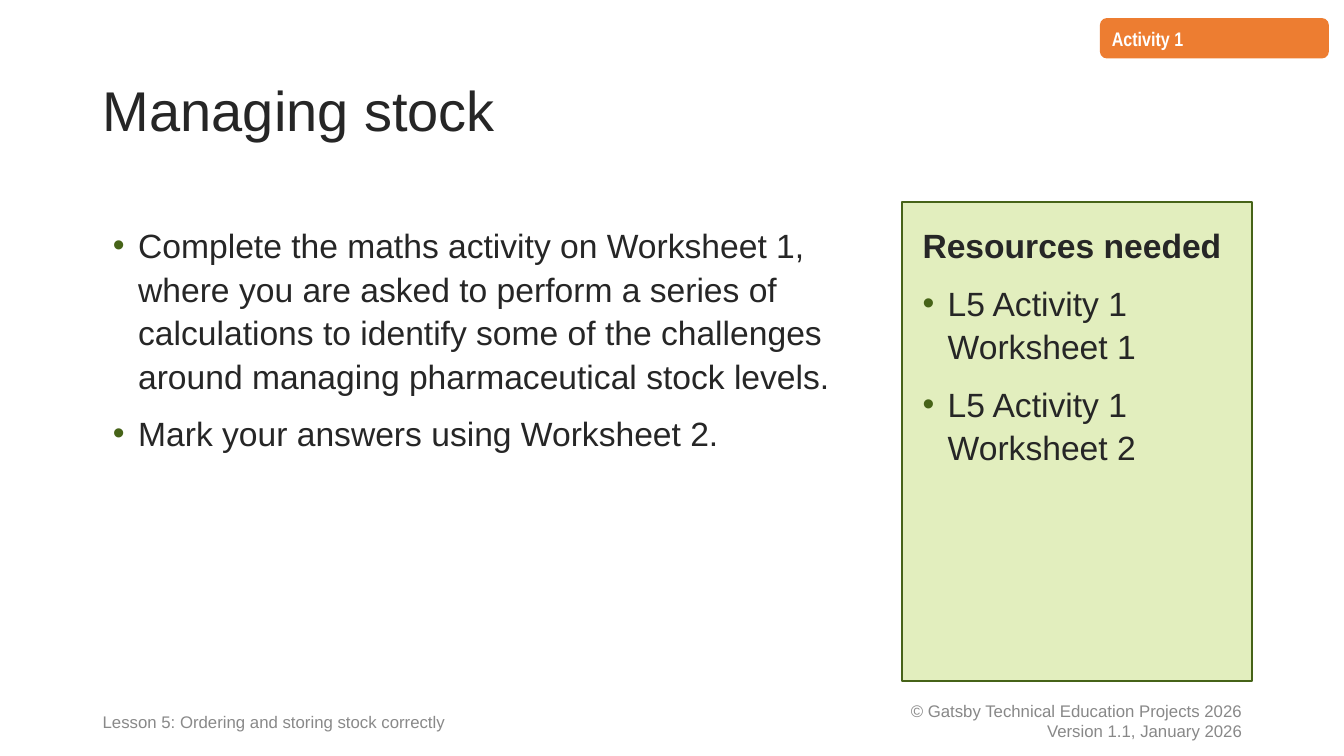
from dataclasses import dataclass

from lxml.etree import SubElement
from pptx import Presentation
from pptx.dml.color import RGBColor
from pptx.enum.shapes import MSO_SHAPE
from pptx.enum.text import MSO_ANCHOR, MSO_AUTO_SIZE, PP_ALIGN
from pptx.oxml.ns import qn
from pptx.util import Emu, Pt

EMU_PER_PX = 9144  # 100 px to the inch


def px(length):
    return Emu(length * EMU_PER_PX)


@dataclass(frozen=True)
class Theme:
    font: str = "Arial"
    tag_font: str = "Arial Narrow"
    ink: str = "262626"
    white: str = "FFFFFF"
    orange: str = "ED7D31"
    dark_green: str = "466318"
    pale_green: str = "E2EEBE"
    copyright_grey: str = "888888"
    lesson_grey: str = "898989"
    title_size: int = 40
    body_size: int = 24
    tag_size: int = 14
    footer_size: int = 12
    line_spacing: float = 1.08
    paragraph_gap: int = 10
    bullet_indent: int = 25


class SlideBuilder:
    def __init__(self, presentation, theme):
        self.theme = theme
        self.slide = presentation.slides.add_slide(presentation.slide_layouts[5])

    def title(self, text, box):
        heading = self.slide.shapes.title
        heading.left, heading.top, heading.width, heading.height = map(px, box)
        self._frame(heading.text_frame, (10, 5), MSO_ANCHOR.MIDDLE)
        self._write(heading.text_frame, [text], size=self.theme.title_size, spacing=0.9)

    def label(self, lines, box, **style):
        frame = self.slide.shapes.add_textbox(*map(px, box)).text_frame
        self._frame(frame, (10, 5), MSO_ANCHOR.MIDDLE)
        self._write(frame, lines, size=self.theme.footer_size, **style)

    def panel(self, box, fill, outline=None, kind=MSO_SHAPE.RECTANGLE, insets=(20, 20)):
        """Add a filled shape and return its text frame."""
        shape = self.slide.shapes.add_shape(kind, *map(px, box))
        shape.shadow.inherit = False
        shape.fill.solid()
        shape.fill.fore_color.rgb = RGBColor.from_string(fill)
        if outline:
            shape.line.color.rgb = RGBColor.from_string(outline)
            shape.line.width = Pt(1.5)
        else:
            shape.line.fill.background()
        self._frame(shape.text_frame, insets, MSO_ANCHOR.TOP)
        return shape.text_frame

    def tag(self, text, box):
        frame = self.panel(box, self.theme.orange, insets=(10, 5),
                           kind=MSO_SHAPE.FLOWCHART_ALTERNATE_PROCESS)
        self._write(frame, [text], size=self.theme.tag_size, color=self.theme.white,
                    font=self.theme.tag_font, bold=True)

    def bullet_panel(self, bullets, box, fill, outline=None, heading=None):
        frame = self.panel(box, fill, outline)
        if heading:
            self._write(frame, [heading], bold=True)
        self._write(frame, bullets, bulleted=True, gap=self.theme.paragraph_gap)

    def _frame(self, frame, insets, anchor):
        across, down = map(px, insets)
        settings = dict(word_wrap=True, auto_size=MSO_AUTO_SIZE.NONE,
                        vertical_anchor=anchor, margin_left=across,
                        margin_right=across, margin_top=down, margin_bottom=down)
        for name, value in settings.items():
            setattr(frame, name, value)

    def _write(self, frame, lines, size=None, color=None, font=None, bold=False,
               spacing=None, align=PP_ALIGN.LEFT, bulleted=False, gap=0):
        """Append lines as paragraphs, starting with the empty first one."""
        for line in lines:
            first = not frame.text
            paragraph = frame.paragraphs[0] if first else frame.add_paragraph()
            layout = dict(alignment=align, space_before=Pt(0 if first else gap),
                          line_spacing=spacing or self.theme.line_spacing)
            for name, value in layout.items():
                setattr(paragraph, name, value)
            if bulleted:
                self._bullet(paragraph)
            run = paragraph.add_run()
            run.text = line
            look = dict(name=font or self.theme.font, bold=bold,
                        size=Pt(size or self.theme.body_size))
            for name, value in look.items():
                setattr(run.font, name, value)
            run.font.color.rgb = RGBColor.from_string(color or self.theme.ink)

    def _bullet(self, paragraph):
        properties = paragraph._p.get_or_add_pPr()
        indent = px(self.theme.bullet_indent)
        properties.set("marL", str(indent))
        properties.set("indent", str(-indent))
        bullet_color = SubElement(properties, qn("a:buClr"))
        SubElement(bullet_color, qn("a:srgbClr"), val=self.theme.dark_green)
        SubElement(properties, qn("a:buFont"), typeface=self.theme.font)
        SubElement(properties, qn("a:buChar"), char="•")


def main():
    presentation = Presentation()
    presentation.slide_width, presentation.slide_height = px(1333), px(750)
    theme = Theme()
    builder = SlideBuilder(presentation, theme)

    left, right = 92, 1242
    panel_top, panel_height = 200, 476
    footer_top, footer_height = 695, 40
    resources_left = 895

    builder.label(["© Gatsby Technical Education Projects 2026",
                   "Version 1.1, January 2026"],
                  (right - 450, footer_top, 450, footer_height),
                  color=theme.copyright_grey, align=PP_ALIGN.RIGHT, spacing=1.0)
    builder.tag("Activity 1", (1091, 18, 227, 40))
    builder.title("Managing stock", (left, 40, right - left, 145))
    builder.bullet_panel(
        ["Complete the maths activity on Worksheet 1, where you are asked to perform "
         "a series of calculations to identify some of the challenges around managing "
         "pharmaceutical stock levels.",
         "Mark your answers using Worksheet 2."],
        (left, panel_top, 775, panel_height), theme.white)
    builder.bullet_panel(
        ["L5 Activity 1 Worksheet 1", "L5 Activity 1 Worksheet 2"],
        (resources_left, panel_top, right - resources_left, panel_height),
        theme.pale_green, outline=theme.dark_green, heading="Resources needed")
    builder.label(["Lesson 5: Ordering and storing stock correctly"],
                  (left, footer_top, 460, footer_height), color=theme.lesson_grey)

    presentation.save("out.pptx")


if __name__ == "__main__":
    main()
